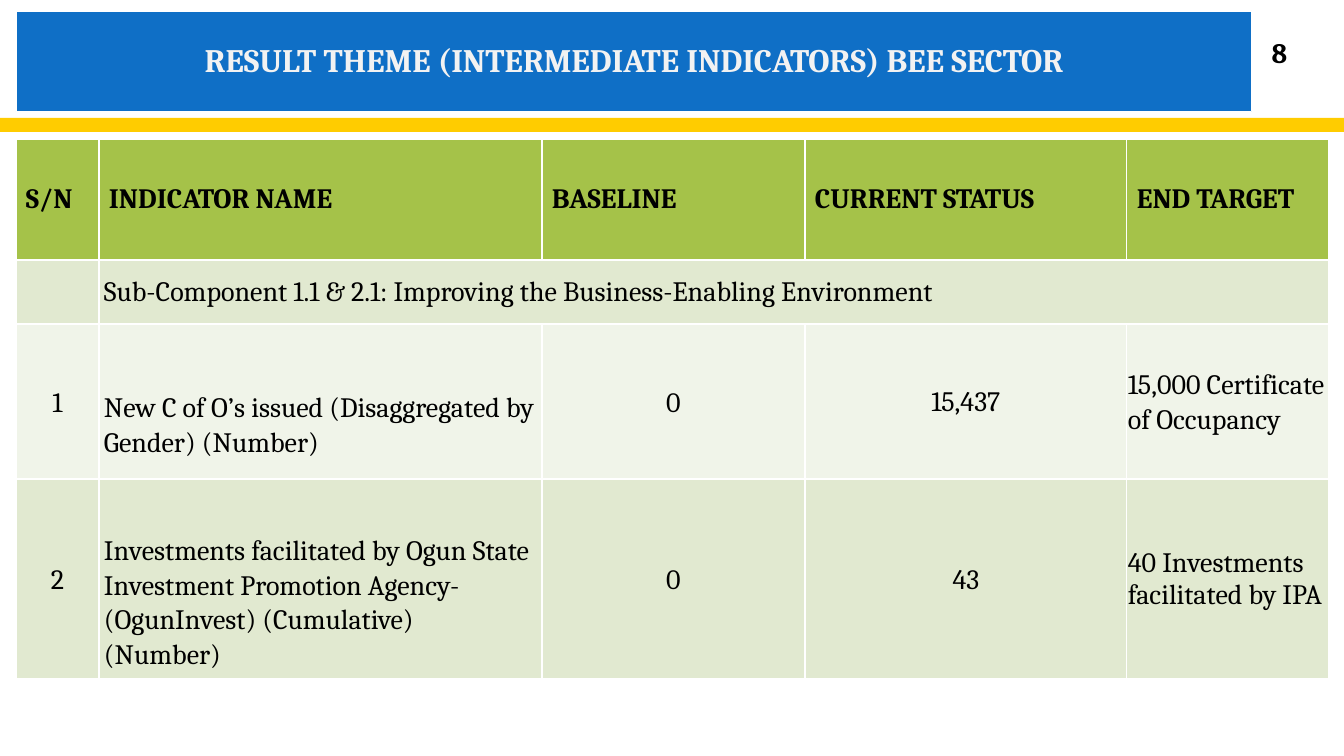
from pptx import Presentation
from pptx import util as u
from pptx.dml.color import RGBColor
from pptx.enum import shapes, text

PX = 914400 / 100.8
SLIDE_W, SLIDE_H = 1344, 756
FONT = "Cambria"
BLACK = RGBColor(0x00, 0x00, 0x00)
WHITE = RGBColor(0xFF, 0xFF, 0xFF)
PALE = RGBColor(0xF2, 0xF2, 0xF2)
BLUE = RGBColor(0x0F, 0x6F, 0xC6)
YELLOW = RGBColor(0xFF, 0xCC, 0x00)
GREEN = RGBColor(0xA5, 0xC2, 0x49)
SAGE = RGBColor(0xE1, 0xE9, 0xD0)
MIST = RGBColor(0xF0, 0xF4, 0xE9)
LEFT, CENTER = text.PP_ALIGN.LEFT, text.PP_ALIGN.CENTER

COLUMNS = [83, 443, 263, 322, 202]
ROWS = [121, 64, 155, 200]
HEADINGS = ["S/N", "INDICATOR NAME", "BASELINE", "CURRENT STATUS", "END TARGET"]
SUB_COMPONENT = "Sub-Component 1.1 & 2.1: Improving the Business-Enabling Environment"
INDICATORS = [
    ["1", "New C of O’s issued (Disaggregated by Gender) (Number)",
     "0", "15,437", "15,000 Certificate of Occupancy"],
    ["2", "Investments facilitated by Ogun State Investment Promotion Agency-"
     "(OgunInvest) (Cumulative) (Number)",
     "0", "43", "40 Investments facilitated by IPA"],
]
ALIGNMENTS = [CENTER, LEFT, CENTER, CENTER, LEFT]
INSETS = [(1, 1, 1, 0), (5, 47, 5, 0), (1, 1, 1, 0), (0, 0, 0, 0), (1, 1, 1, 0)]


def px(length):
    return u.Emu(round(length * PX))


def write(frame, words, size=20, color=BLACK, bold=False, align=LEFT, spacing=1.0):
    paragraph = frame.paragraphs[0]
    paragraph.alignment = align
    paragraph.line_spacing = spacing
    run = paragraph.add_run()
    run.text = words
    run.font.name = FONT
    run.font.size = u.Pt(size)
    run.font.bold = bold
    run.font.color.rgb = color


def fill_cell(cell, words, inset, **style):
    cell.vertical_anchor = text.MSO_ANCHOR.MIDDLE
    cell.margin_left, cell.margin_top, cell.margin_right, cell.margin_bottom = map(px, inset)
    write(cell.text_frame, words, **style)


def add_bar(slide, box, color):
    bar = slide.shapes.add_shape(shapes.MSO_SHAPE.RECTANGLE, *map(px, box))
    bar.shadow.inherit = False
    bar.fill.solid()
    bar.fill.fore_color.rgb = color
    bar.line.fill.background()
    return bar


def add_indicator_table(slide, left, top):
    box = (left, top, sum(COLUMNS), sum(ROWS))
    indicators = slide.shapes.add_table(len(ROWS), len(COLUMNS), *map(px, box)).table
    for column, width in zip(indicators.columns, COLUMNS):
        column.width = px(width)
    for row, height, color in zip(indicators.rows, ROWS, [GREEN, SAGE, MIST, SAGE]):
        row.height = px(height)
        for cell in row.cells:
            cell.fill.solid()
            cell.fill.fore_color.rgb = color

    for col, heading in enumerate(HEADINGS):
        fill_cell(indicators.cell(0, col), heading, (10, 5, 10, 5), bold=True)

    sub_component = indicators.cell(1, 1)
    sub_component.merge(indicators.cell(1, len(COLUMNS) - 1))
    fill_cell(sub_component, SUB_COMPONENT, (5, 1, 5, 0))

    for row, indicator in enumerate(INDICATORS, start=2):
        for col, words in enumerate(indicator):
            spacing = 1.0 if (row, col) == (3, 4) else 1.07
            fill_cell(indicators.cell(row, col), words, INSETS[col],
                      align=ALIGNMENTS[col], spacing=spacing)


def add_header(slide, left, top, width, height):
    page_box = (left + width - 22, top + 21, 99, 40)
    page_number = slide.shapes.add_textbox(*map(px, page_box)).text_frame
    page_number.word_wrap = True
    page_number.vertical_anchor = text.MSO_ANCHOR.MIDDLE
    write(page_number, "8", bold=True, align=CENTER)

    banner = add_bar(slide, (left, top, width, height), BLUE)
    banner.line.color.rgb = WHITE
    banner.line.width = u.Pt(0.75)
    title = banner.text_frame
    title.word_wrap = True
    title.vertical_anchor = text.MSO_ANCHOR.MIDDLE
    write(title, "RESULT THEME (INTERMEDIATE INDICATORS) BEE SECTOR",
          size=23.4, color=PALE, bold=True, align=CENTER, spacing=0.9)


def main():
    deck = Presentation()
    deck.slide_width, deck.slide_height = px(SLIDE_W), px(SLIDE_H)
    slide = deck.slides.add_slide(deck.slide_layouts[6])
    add_bar(slide, (0, 118, SLIDE_W, 14), YELLOW)
    add_indicator_table(slide, 16, 139)
    add_header(slide, 16, 11, 1236, 101)
    deck.save("out.pptx")


if __name__ == "__main__":
    main()
